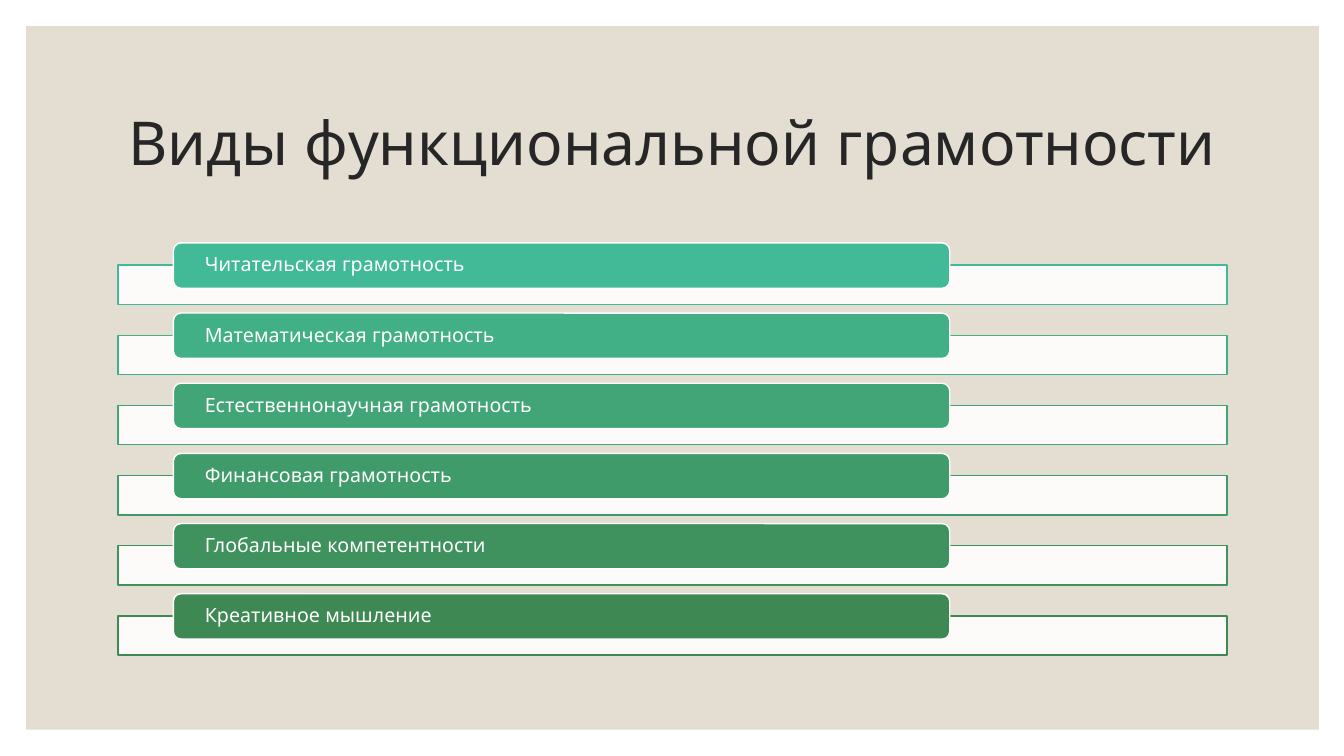
from lxml.etree import SubElement
from pptx import Presentation
from pptx.dml.color import RGBColor
from pptx.enum.shapes import MSO_SHAPE
from pptx.enum.text import MSO_ANCHOR, MSO_AUTO_SIZE, PP_ALIGN
from pptx.oxml.ns import qn
from pptx.util import Inches, Pt

FONT = "Quicksand"
WHITE, SAND, INK = "FFFFFF", "E3DED1", "262626"
LITERACIES = [
    ("Читательская грамотность", "42BA97"),
    ("Математическая грамотность", "42B086"),
    ("Естественнонаучная грамотность", "41A577"),
    ("Финансовая грамотность", "409B6A"),
    ("Глобальные компетентности", "3F925E"),
    ("Креативное мышление", "3E8853"),
]


def rgb(value):
    return RGBColor.from_string(value)


def add_box(shapes, kind, box, fill, line=None):
    sp = shapes.add_shape(kind, *map(Inches, box))
    sp.shadow.inherit = False
    sp.fill.solid()
    sp.fill.fore_color.rgb = rgb(fill)
    if line:
        sp.line.color.rgb = rgb(line)
        sp.line.width = Pt(1)
    else:
        sp.line.fill.background()
    return sp


def set_opacity(sp, percent):
    color = sp.fill._xPr.find(qn("a:solidFill"))[0]
    SubElement(color, qn("a:alpha"), val=str(percent * 1000))


def write_text(sp, text, size, color, inset, space_after=0):
    tf = sp.text_frame
    frame_format = {
        "word_wrap": True, "auto_size": MSO_AUTO_SIZE.NONE,
        "vertical_anchor": MSO_ANCHOR.MIDDLE,
        "margin_left": Inches(inset), "margin_right": Inches(inset),
        "margin_top": 0, "margin_bottom": 0,
    }
    for name, value in frame_format.items():
        setattr(tf, name, value)
    p = tf.paragraphs[0]
    p.alignment = PP_ALIGN.LEFT
    p.line_spacing = 0.9
    p.space_after = Pt(space_after)
    r = p.add_run()
    r.text = text
    for name, value in {"name": FONT, "size": Pt(size)}.items():
        setattr(r.font, name, value)
    r.font.color.rgb = rgb(color)


def add_backdrop(slide, box):
    """Place the sand panel behind everything else."""
    sp = add_box(slide.shapes, MSO_SHAPE.RECTANGLE, box, SAND)
    slide.shapes._spTree.insert(2, sp._element)


def add_title(slide, box, text):
    title = slide.shapes.title
    for name, value in zip(("left", "top", "width", "height"), box):
        setattr(title, name, Inches(value))
    write_text(title, text, 43.2, INK, 0.1)


def add_literacy_list(slide, box, items):
    """Stack coloured labels, each overlapping the top of a pale bar."""
    left, top, width, height = box
    label_h, bar_h, bar_drop = 0.45, 0.39, 0.22
    pitch = (height - bar_drop - bar_h) / (len(items) - 1)
    shapes = slide.shapes.add_group_shape().shapes
    for i, (text, color) in enumerate(items):
        y = top + i * pitch
        bar = add_box(shapes, MSO_SHAPE.RECTANGLE,
                      (left, y + bar_drop, width, bar_h), WHITE, color)
        set_opacity(bar, 90)
        label = add_box(shapes, MSO_SHAPE.ROUNDED_RECTANGLE,
                        (left + width * 0.05, y, width * 0.7, label_h),
                        color, WHITE)
        write_text(label, text, 14, WHITE, 0.29, space_after=4.9)


def main():
    prs = Presentation()
    prs.slide_width, prs.slide_height = Inches(13.33), Inches(7.5)
    slide = prs.slides.add_slide(prs.slide_layouts[5])
    add_backdrop(slide, (0.26, 0.26, 12.82, 6.98))
    add_title(slide, (1.17, 0.7, 11, 1.5), "Виды функциональной грамотности")
    add_literacy_list(slide, (1.17, 2.41, 11, 4.09), LITERACIES)
    prs.save("out.pptx")


if __name__ == "__main__":
    main()
